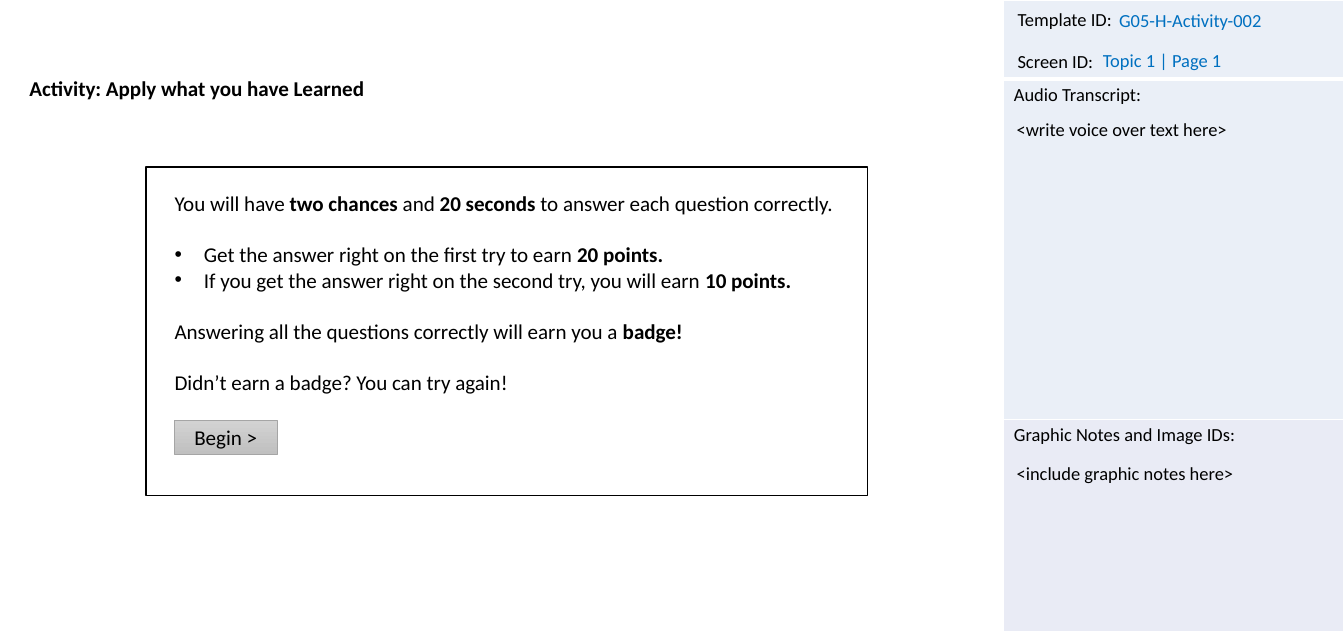
import pptx
import pptx.dml.color
import pptx.enum.shapes
import pptx.enum.text
import pptx.oxml
import pptx.oxml.ns
import pptx.util
from pptx.util import Inches

COLORS = {
    "black": "000000", "white": "FFFFFF", "link": "0070C0",
    "panel": "EAEFF7", "notes": "E9EBF5",
    "button_top": "D2D2D2", "button_bottom": "C0C0C0", "button_line": "A5A5A5",
}
FONT = "Calibri"
BLANK_LINE = 19.5
CENTER = pptx.enum.text.PP_ALIGN.CENTER
RECTANGLE = pptx.enum.shapes.MSO_SHAPE.RECTANGLE


def rgb(name):
    return pptx.dml.color.RGBColor.from_string(COLORS[name])


def write(paragraph, text, size=14, color="black", align=None, after=0):
    """Fill a paragraph; pieces between ** marks are bold."""
    paragraph.alignment = align
    paragraph.space_after = pptx.util.Pt(after)
    for index, piece in enumerate(text.split("**")):
        if piece:
            run = paragraph.add_run()
            run.text = piece
            run.font.name = FONT
            run.font.size = pptx.util.Pt(size)
            run.font.bold = index % 2 == 1
            run.font.color.rgb = rgb(color)


def set_margins(frame, horizontal, vertical):
    frame.margin_left = frame.margin_right = Inches(horizontal)
    frame.margin_top = frame.margin_bottom = Inches(vertical)


def add_text(slide, box, text="", margins=(0.1, 0.05), **style):
    frame = slide.shapes.add_textbox(*map(Inches, box)).text_frame
    frame.word_wrap = True
    set_margins(frame, *margins)
    write(frame.paragraphs[0], text, **style)
    return frame


def add_rectangle(slide, box, line, width):
    shape = slide.shapes.add_shape(RECTANGLE, *map(Inches, box))
    shape.shadow.inherit = False
    shape.line.color.rgb = rgb(line)
    shape.line.width = pptx.util.Pt(width)
    return shape


def add_bullet(paragraph, indent):
    properties = paragraph._p.get_or_add_pPr()
    properties.set("marL", str(Inches(indent)))
    properties.set("indent", str(-Inches(indent)))
    namespace = pptx.oxml.ns.nsdecls("a")
    properties.append(pptx.oxml.parse_xml(f'<a:buFont {namespace} typeface="Arial"/>'))
    properties.append(pptx.oxml.parse_xml(f'<a:buChar {namespace} char="•"/>'))


def style_cell(cell, fill, bottom_width):
    """Set the white borders, then the fill that must follow them."""
    properties = cell._tc.get_or_add_tcPr()
    widths = {"lnL": 1, "lnR": 1, "lnT": 1, "lnB": bottom_width}
    for side, width in widths.items():
        properties.append(pptx.oxml.parse_xml(
            f'<a:{side} {pptx.oxml.ns.nsdecls("a")} w="{pptx.util.Pt(width)}"><a:solidFill>'
            f'<a:srgbClr val="{COLORS["white"]}"/></a:solidFill></a:{side}>'))
    cell.fill.solid()
    cell.fill.fore_color.rgb = rgb(fill)


def add_sidebar(slide, left, top, width):
    sections = [
        ("", 0.83, "panel", 3),
        ("Audio Transcript:", 3.59, "panel", 1),
        ("Graphic Notes and Image IDs:", 2.23, "notes", 1),
    ]
    height = sum(section[1] for section in sections)
    table = slide.shapes.add_table(
        len(sections), 1, *map(Inches, (left, top, width, height))).table
    table.first_row = table.horz_banding = False
    for index, (heading, row_height, fill, bottom_width) in enumerate(sections):
        table.rows[index].height = Inches(row_height)
        cell = table.cell(index, 0)
        set_margins(cell, 0.11, 0.05)
        style_cell(cell, fill, bottom_width)
        if index:
            # The second border of a shared edge must match the first.
            top_line = cell._tc.tcPr.find(pptx.oxml.ns.qn("a:lnT"))
            top_line.set("w", str(pptx.util.Pt(sections[index - 1][3])))
        write(cell.text_frame.paragraphs[0], heading)

    for x, y, text_width, text, color in [
        (0.05, 0.48, 3.5, "Screen ID:", "black"),
        (0.05, 0.04, 3.5, "Template ID:", "black"),
        (0.04, 1.19, 3.56, "<write voice over text here>", "black"),
        (0.04, 4.82, 3.56, "<include graphic notes here>", "black"),
        (1.12, 0.05, 2.47, "G05-H-Activity-002", "link"),
        (0.95, 0.47, 1.54, "Topic 1 | Page 1", "link"),
    ]:
        add_text(slide, (left + x, top + y, text_width, 0.34), text, color=color)


def add_begin_button(slide, box):
    button = add_rectangle(slide, box, "button_line", 0.5)
    button.fill.gradient()
    button.fill.gradient_angle = 270
    for stop, color in zip(button.fill.gradient_stops, ("button_top", "button_bottom")):
        stop.color.rgb = rgb(color)
    frame = button.text_frame
    set_margins(frame, 0, 0.05)
    frame.vertical_anchor = pptx.enum.text.MSO_ANCHOR.MIDDLE
    write(frame.paragraphs[0], "Begin >", size=16, align=CENTER)


def add_instructions(slide, left, top, width, height):
    lines = [
        ("You will have **two chances **and **20 seconds **to answer each question correctly.",
         False, BLANK_LINE),
        ("Get the answer right on the first try to earn **20 points.**", True, 0),
        ("If you get the answer right on the second try, you will earn **10 points.**",
         True, BLANK_LINE),
        ("Answering all the questions correctly will earn you a **badge!**", False, BLANK_LINE),
        ("Didn’t earn a badge? You can try again!", False, 0),
    ]
    padding = 0.3
    frame = add_text(slide, (left + padding, top + 0.25, width, 2.23), margins=(0, 0))
    for index, (text, bulleted, after) in enumerate(lines):
        paragraph = frame.add_paragraph() if index else frame.paragraphs[0]
        write(paragraph, text, size=16, after=after)
        if bulleted:
            add_bullet(paragraph, 0.31)
    add_begin_button(slide, (left + padding, top + 2.67, 1.08, 0.36))
    border = add_rectangle(slide, (left, top, width, height), "black", 1)
    border.fill.background()


def main():
    deck = pptx.Presentation()
    deck.slide_width, deck.slide_height = Inches(14.17), Inches(6.69)
    slide = deck.slides.add_slide(deck.slide_layouts[6])
    add_sidebar(slide, 10.58, 0, 3.59)
    add_text(slide, (0.31, 0.79, 6.41, 0.38),
             "**Activity: Apply what you have Learned**", margins=(0, 0), size=16)
    add_instructions(slide, 1.54, 1.76, 7.61, 3.46)
    deck.save("out.pptx")


if __name__ == "__main__":
    main()
